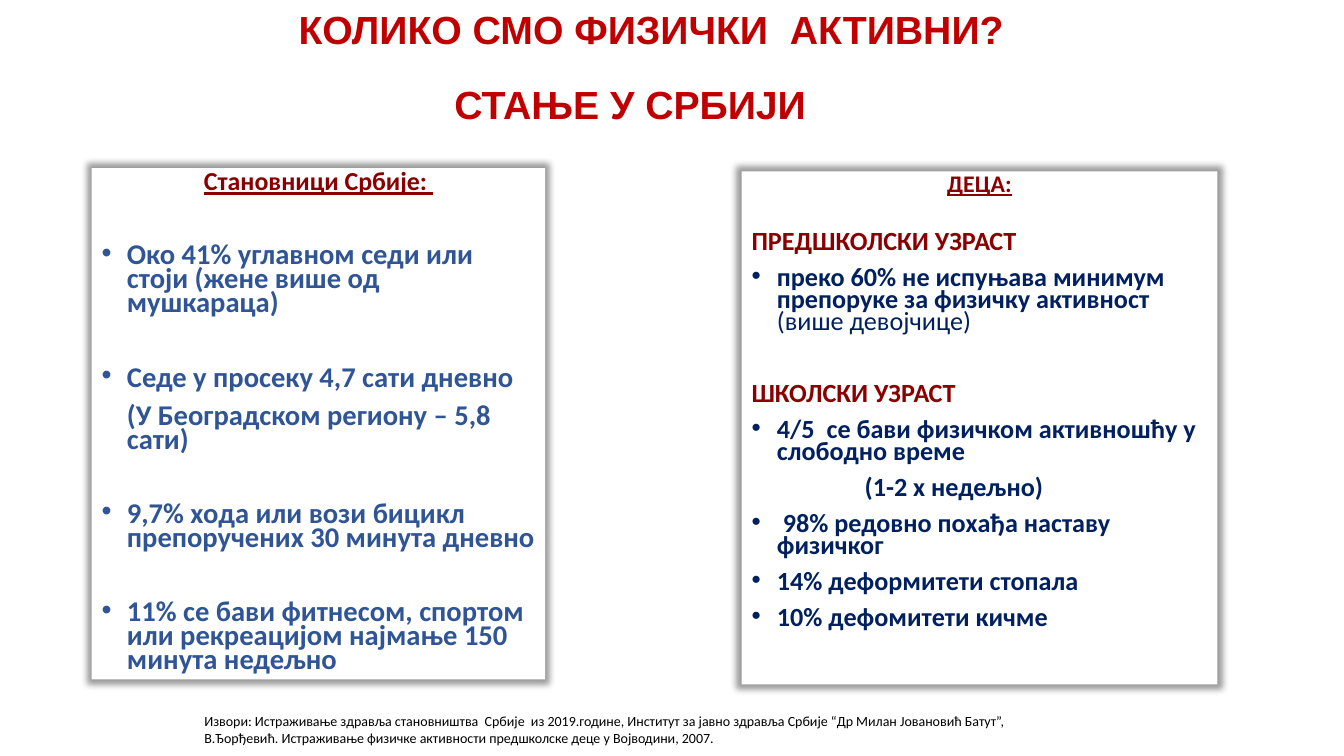
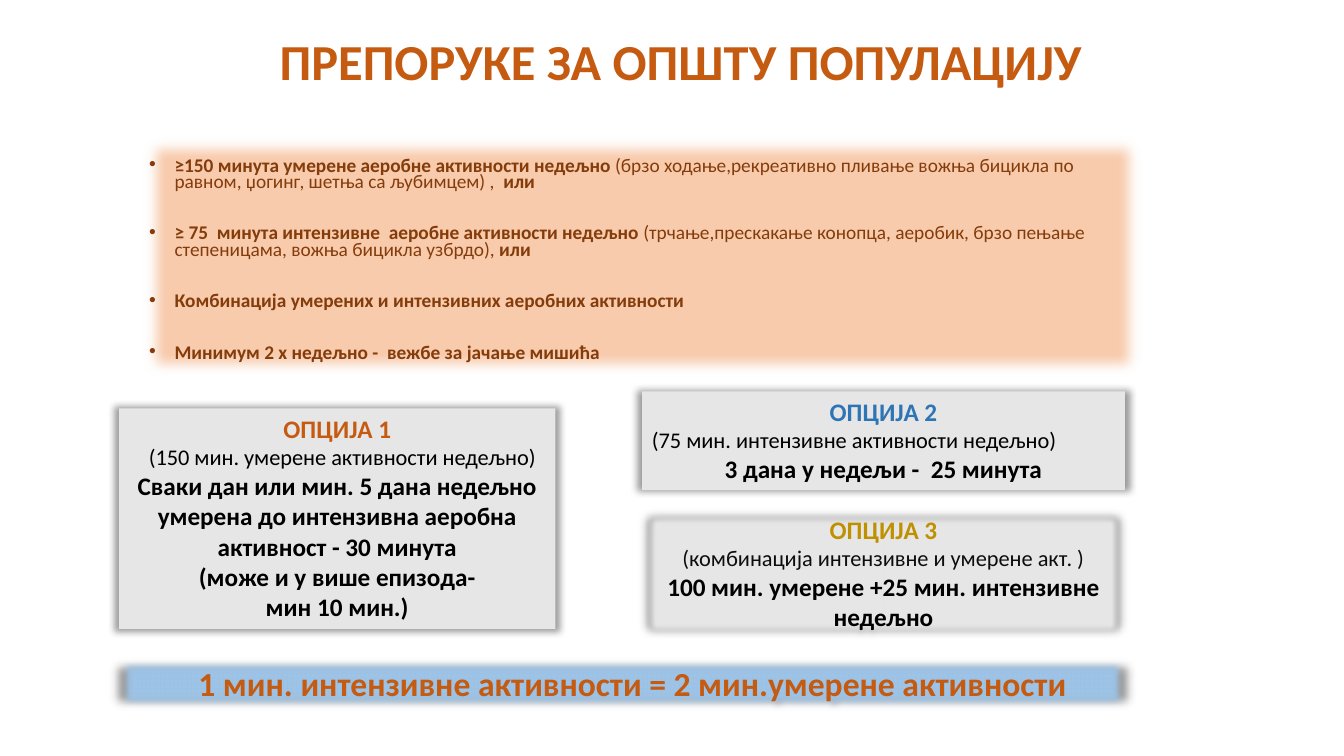
from dataclasses import dataclass

from lxml.etree import SubElement
from pptx import Presentation
from pptx.dml.color import RGBColor
from pptx.enum.shapes import MSO_SHAPE as SHAPE
from pptx.enum.text import MSO_ANCHOR as ANCHOR, PP_ALIGN as ALIGN
from pptx.oxml.ns import qn
from pptx.util import Cm, Pt

WHITE = RGBColor(0xFF, 0xFF, 0xFF)
BLACK = RGBColor(0x00, 0x00, 0x00)
SOFT_BLACK = RGBColor(0x0D, 0x0D, 0x0D)
RED = RGBColor(0xC0, 0x00, 0x00)
MAROON = RGBColor(0x8A, 0x00, 0x00)
STEEL = RGBColor(0x2F, 0x55, 0x97)
NAVY = RGBColor(0x00, 0x20, 0x60)
ORANGE = RGBColor(0xC5, 0x5A, 0x11)
BROWN = RGBColor(0x84, 0x3C, 0x0B)
PEACH = RGBColor(0xF8, 0xCB, 0xAD)
BLUE = RGBColor(0x2E, 0x75, 0xB6)
SKY = RGBColor(0x9D, 0xC3, 0xE6)
GOLD = RGBColor(0xBF, 0x90, 0x00)
GREY = RGBColor(0xE7, 0xE6, 0xE6)

HANG = 0.64
TIGHT = 0.7


@dataclass
class Style:
    size: float
    color: RGBColor
    bold: bool = True
    underline: bool = False
    font: str = "Calibri"


def add_box(s, box, fill=WHITE, shadow=None, soft=0):
    sp = s.shapes.add_shape(SHAPE.RECTANGLE, *(Cm(v) for v in box))
    sp.fill.solid()
    sp.fill.fore_color.rgb = fill
    sp.line.fill.background()
    sp.shadow.inherit = False
    effects = sp._element.spPr.find(qn("a:effectLst"))
    if shadow is not None:
        outer = SubElement(effects, qn("a:outerShdw"), blurRad=str(Pt(5)),
                           sx="102000", sy="102000", algn="ctr", rotWithShape="0")
        color = SubElement(outer, qn("a:srgbClr"), val=str(shadow))
        SubElement(color, qn("a:alpha"), val="40000")
    if soft:
        SubElement(effects, qn("a:softEdge"), rad=str(Pt(soft)))
    tf = sp.text_frame
    tf.word_wrap = True
    tf.vertical_anchor = ANCHOR.TOP
    return tf


def add_par(tf, *runs, align=ALIGN.LEFT, bullet=False, indent=0, before=0, spacing=1):
    first = not tf.paragraphs[0].runs
    p = tf.paragraphs[0] if first else tf.add_paragraph()
    pPr = p._p.get_or_add_pPr()
    if bullet:
        pPr.set("marL", str(Cm(HANG)))
        pPr.set("indent", str(-Cm(HANG)))
        SubElement(pPr, qn("a:buFont"), typeface="Arial")
        SubElement(pPr, qn("a:buChar"), char="•")
    elif indent:
        pPr.set("marL", str(Cm(indent)))
    p.alignment = align
    p.line_spacing = spacing
    p.space_before = Pt(0 if first else before)
    for text, style in runs:
        r = p.add_run()
        r.text = text
        r.font.size = Pt(style.size)
        r.font.name = style.font
        r.font.bold = style.bold
        r.font.underline = style.underline
        r.font.color.rgb = style.color
    return p


def survey_title(s, box, text):
    tf = add_box(s, box)
    add_par(tf, (text, Style(28, RED, font="Arial")), align=ALIGN.CENTER)


def residents_panel(s, box):
    tf = add_box(s, box, shadow=BLACK)
    body = Style(20.4, STEEL)
    add_par(tf, ("Становници Србије: ", Style(18.5, MAROON, underline=True)),
            align=ALIGN.CENTER, spacing=TIGHT)
    for text, bullet, before in (
        ("Око 41% углавном седи или стоји (жене више од мушкараца)", True, 36),
        ("Седе у просеку 4,7 сати дневно", True, 36),
        ("(У Београдском региону – 5,8 сати)", False, 10),
        ("9,7% хода или вози бицикл препоручених 30 минута дневно", True, 36),
        ("11% се бави фитнесом, спортом или рекреацијом најмање 150 минута недељно",
         True, 36),
    ):
        add_par(tf, (text, body), bullet=bullet, indent=HANG, before=before,
                spacing=TIGHT)


def children_panel(s, box):
    tf = add_box(s, box, shadow=BLACK)
    head, body = Style(18.7, MAROON), Style(18.7, NAVY)
    light = Style(18.7, NAVY, bold=False)
    add_par(tf, ("ДЕЦА:", Style(17, MAROON, underline=True)),
            align=ALIGN.CENTER, spacing=TIGHT)
    add_par(tf, ("ПРЕДШКОЛСКИ УЗРАСТ", head), before=26, spacing=TIGHT)
    add_par(tf, ("преко 60% не испуњава минимум препоруке за физичку активност ", body),
            ("(више девојчице)", light), bullet=True, before=10, spacing=TIGHT)
    add_par(tf, ("ШКОЛСКИ УЗРАСТ", head), before=36, spacing=TIGHT)
    for text, bullet in (
        ("4/5  се бави физичком активношћу у слободно време", True),
        ("(1-2 x недељно)", False),
        (" 98% редовно похађа наставу физичког", True),
        ("14% деформитети стопала", True),
        ("10% дефомитети кичме", True),
    ):
        add_par(tf, (text, body), bullet=bullet, indent=2.85, before=10,
                spacing=TIGHT)


def sources_note(s, box):
    tf = s.shapes.add_textbox(*(Cm(v) for v in box)).text_frame
    tf.word_wrap = True
    style = Style(10, BLACK, bold=False)
    p = add_par(tf, ("Извори: Истраживање здравља становништва  Србије  из 2019.године, "
                     "Институт за јавно здравља Србије “Др Милан Јовановић Батут”,", style))
    p.add_line_break()
    r = p.add_run()
    r.text = "В.Ђорђевић. Истраживање физичке активности предшколске деце у Војводини, 2007."
    r.font.size = Pt(style.size)
    r.font.name = style.font
    r.font.color.rgb = style.color


def advice_title(s, box):
    tf = add_box(s, box)
    tf.vertical_anchor = ANCHOR.MIDDLE
    add_par(tf, ("ПРЕПОРУКЕ ЗА ОПШТУ ПОПУЛАЦИЈУ", Style(36, ORANGE)),
            indent=1.16, spacing=0.9)


def advice_panel(s, box):
    tf = add_box(s, box, PEACH, soft=10)
    tf.margin_top = Cm(0.68)
    strong, light = Style(13.8, BROWN), Style(13.8, BROWN, bold=False)
    for runs in (
        (("≥150 минута умерене аеробне активности недељно ", strong),
         ("(брзо ходање,рекреативно пливање вожња бицикла по равном, џогинг, "
          "шетња са љубимцем) ,  ", light),
         ("или", strong)),
        (("≥ 75  минута интензивне  аеробне активности недељно ", strong),
         ("(трчање,прескакање конопца, аеробик, брзо пењање степеницама, "
          "вожња бицикла узбрдо), ", light),
         ("или", strong)),
        (("Комбинација умерених и интензивних аеробних активности", strong),),
        (("Минимум 2 х недељно -  вежбе за јачање мишића", strong),),
    ):
        add_par(tf, *runs, bullet=True, before=25.3, spacing=TIGHT)


def option_card(s, box, title, color, detail, lines, detail_color=BLACK,
                detail_align=ALIGN.LEFT, indent=0, shadow=BLACK, soft=0):
    tf = add_box(s, box, GREY, shadow, soft)
    add_par(tf, (title, Style(18, color)), align=ALIGN.CENTER)
    add_par(tf, (detail, Style(16, detail_color, bold=False)),
            align=detail_align, indent=indent)
    for line in lines:
        add_par(tf, (line, Style(18, BLACK)), align=ALIGN.CENTER)


def equation_band(s, box):
    tf = add_box(s, box, SKY, shadow=BLACK, soft=5)
    add_par(tf, ("1 мин. интензивне активности = 2 мин.умерене активности",
                 Style(24, ORANGE)), indent=1.75)


def survey_slide(s):
    sources_note(s, (4.9, 17.83, 24.41, 1.55))
    residents_panel(s, (2.31, 4.24, 11.43, 12.88))
    children_panel(s, (18.69, 4.32, 11.99, 12.93))
    survey_title(s, (10.18, 1.91, 11.4, 1.45), "СТАЊЕ У СРБИЈИ")
    survey_title(s, (7.1, 0, 18.62, 1.45), "КОЛИКО СМО ФИЗИЧКИ  АКТИВНИ?")


def advice_slide(s):
    left, right, card_w = 3, 16.18, 12.17
    advice_title(s, (5.64, 0.28, 22.12, 2.69))
    advice_panel(s, (3.51, 3.33, 25.37, 6.25))
    option_card(s, (right, 9.86, card_w, 2.49), "ОПЦИЈА 2", BLUE,
                "(75 мин. интензивне активности недељно)",
                ["3 дана у недељи -  25 минута"])
    option_card(s, (left, 10.29, 11, 5.56), "ОПЦИЈА 1", ORANGE,
                "(150 мин. умерене активности недељно)",
                ["Сваки дан или мин. 5 дана недељно умерена до интензивна "
                 "аеробна активност - 30 минута",
                 "(може и у више епизода-",
                 "мин 10 мин.)"],
                indent=0.5, shadow=SOFT_BLACK)
    option_card(s, (right, 12.83, card_w, 3.25), "ОПЦИЈА 3", GOLD,
                "(комбинација интензивне и умерене акт. )",
                ["100 мин. умерене +25 мин. интензивне недељно"],
                detail_color=SOFT_BLACK, detail_align=ALIGN.CENTER, soft=5)
    equation_band(s, (left, 16.59, 25.37, 1.27))


def main():
    prs = Presentation()
    prs.slide_width, prs.slide_height = Cm(33.87), Cm(19.05)
    for build in (survey_slide, advice_slide):
        build(prs.slides.add_slide(prs.slide_layouts[6]))
    prs.save("out.pptx")


if __name__ == "__main__":
    main()
